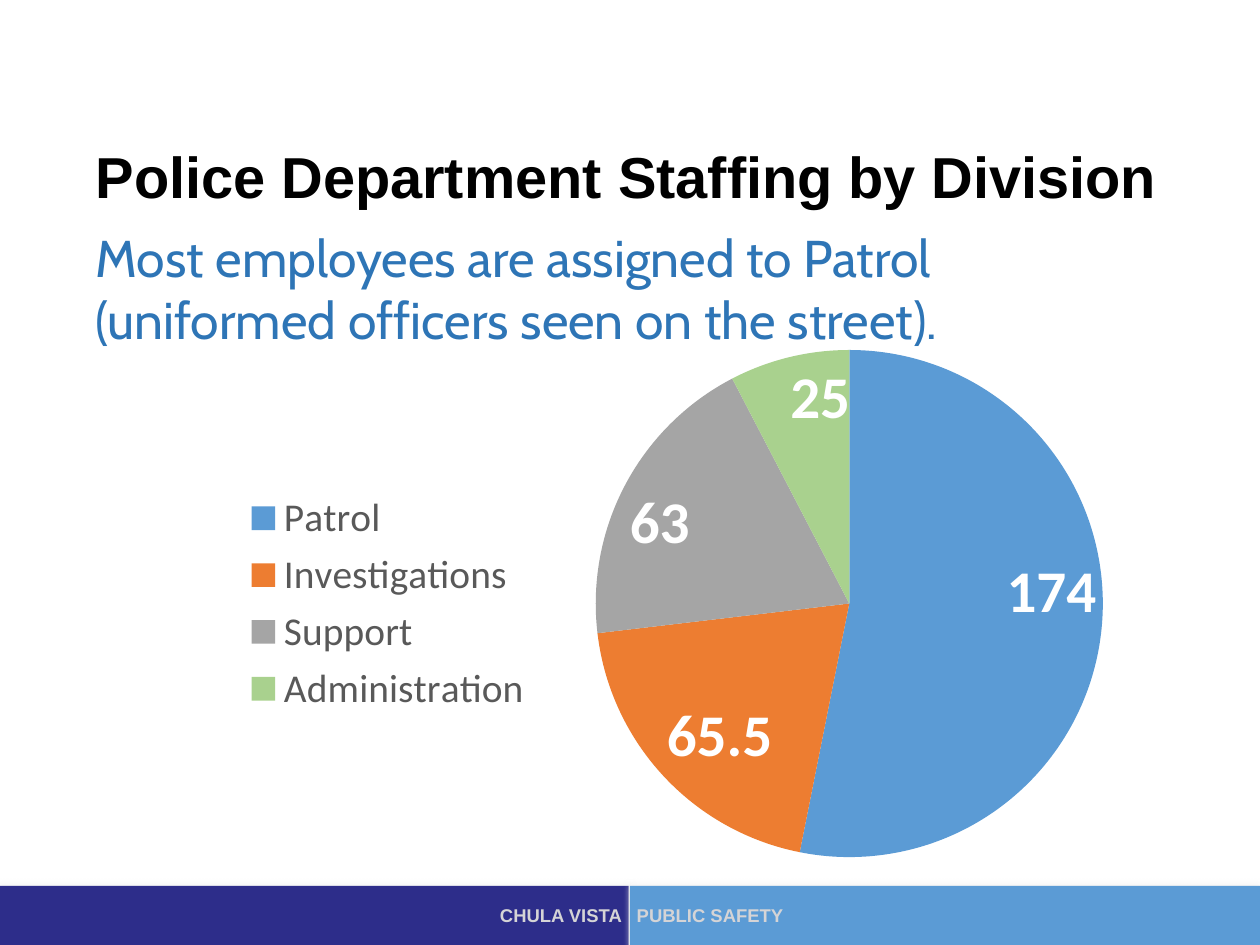
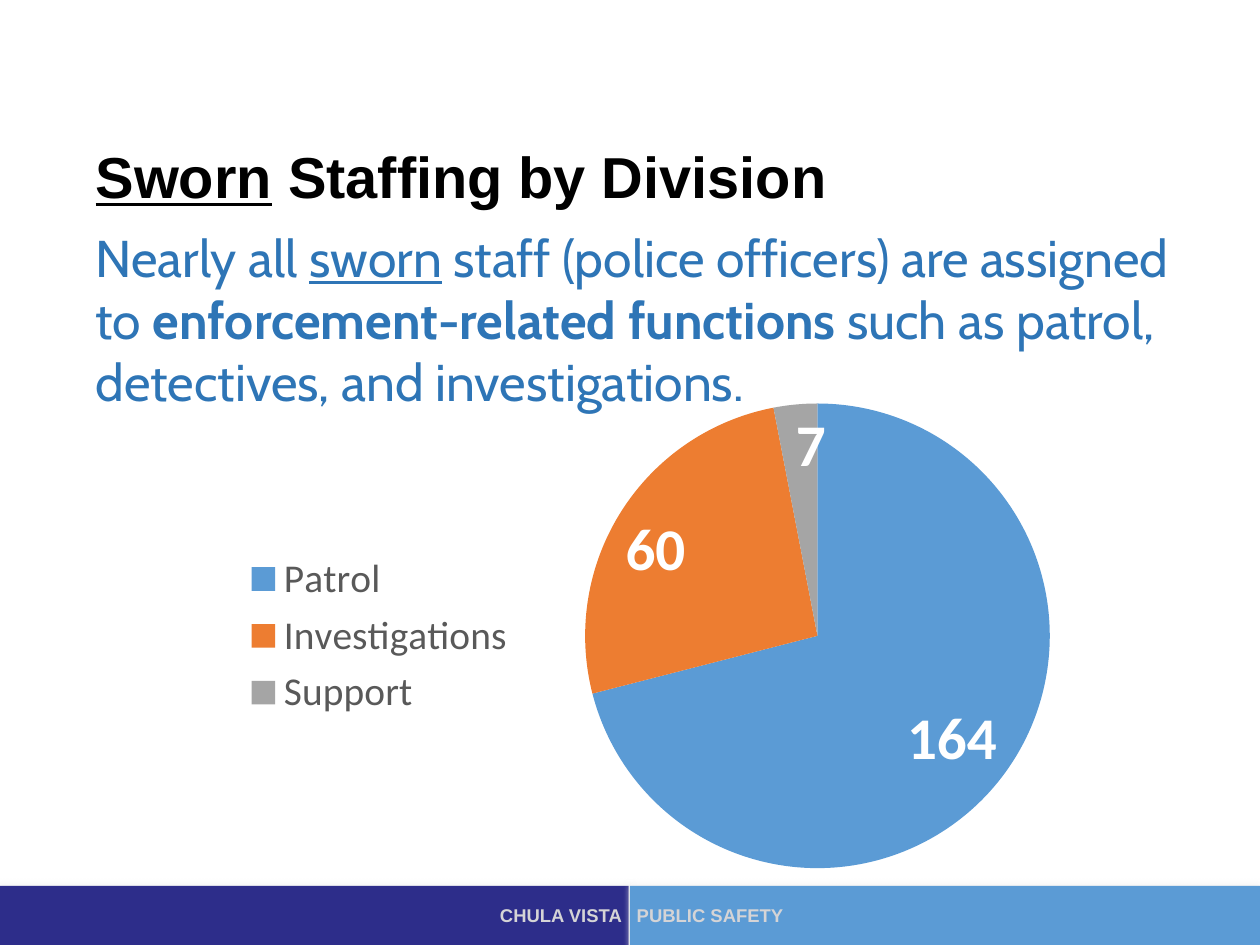
import lxml.etree
import pptx
import pptx.chart.data
import pptx.dml.color
import pptx.enum.chart
import pptx.enum.shapes
import pptx.enum.text
import pptx.oxml.ns
import pptx.util

Pt = pptx.util.Pt
RGB = pptx.dml.color.RGBColor
ALIGN = pptx.enum.text.PP_ALIGN
ANCHOR = pptx.enum.text.MSO_ANCHOR
FIT = pptx.enum.text.MSO_AUTO_SIZE

BLACK = RGB(0, 0, 0)
WHITE = RGB(255, 255, 255)
NAVY = RGB(0x2D, 0x2D, 0x8A)
BLUE = RGB(0x5B, 0x9B, 0xD5)
ORANGE = RGB(0xED, 0x7D, 0x31)
GRAY = RGB(0xA5, 0xA5, 0xA5)
GREEN = RGB(0xA9, 0xD1, 0x8E)
INK = RGB(0x2E, 0x75, 0xB6)
SLATE = RGB(0x59, 0x59, 0x59)
SILVER = RGB(0xD5, 0xD4, 0xD6)
GLOW = RGB(0xE7, 0xE6, 0xE6)

WIDE, HIGH = 1024, 768
LEFT = 70.5
SLICES = (BLUE, ORANGE, GRAY, GREEN)


def style(font, name, size, color, bold=False):
    font.name, font.size, font.bold = name, Pt(size), bold
    font.color.rgb = color


def place(shape, *box):
    shape.left, shape.top, shape.width, shape.height = map(Pt, box)


def fill_text(para, parts):
    for text, mark in parts:
        run = para.add_run()
        run.text = text
        if mark:
            setattr(run.font, mark, True)


def add_glow(shape):
    qn = pptx.oxml.ns.qn
    shape.shadow.inherit = False
    effects = shape.element.spPr.find(qn("a:effectLst"))
    glow = lxml.etree.SubElement(effects, qn("a:outerShdw"),
                                 blurRad=str(Pt(6)), dist="0", dir="0")
    color = lxml.etree.SubElement(glow, qn("a:srgbClr"), val=str(GLOW))
    lxml.etree.SubElement(color, qn("a:alpha"), val="80000")


def add_band(slide, left, width, fill, text, align):
    rect = pptx.enum.shapes.MSO_SHAPE.RECTANGLE
    band = slide.shapes.add_shape(rect, Pt(left), Pt(720), Pt(width), Pt(49.5))
    band.fill.solid()
    band.fill.fore_color.rgb = fill
    band.line.fill.background()
    add_glow(band)
    frame = band.text_frame
    frame.margin_left = frame.margin_right = Pt(5.5)
    frame.vertical_anchor = ANCHOR.MIDDLE
    para = frame.paragraphs[0]
    para.text, para.alignment, para.line_spacing = text, align, 0.9
    style(para.font, "Arial", 15, SILVER, True)


def add_title(slide, parts):
    title = slide.shapes.title
    place(title, LEFT, 103.5, 883.5, 85.5)
    frame = title.text_frame
    frame.auto_size = FIT.NONE
    frame.vertical_anchor = ANCHOR.MIDDLE
    para = frame.paragraphs[0]
    para.alignment, para.line_spacing = ALIGN.LEFT, 0.9
    style(para.font, "Arial", 46.9, BLACK, True)
    fill_text(para, parts)


def add_lead(slide, height, parts):
    box = slide.shapes.add_textbox(Pt(LEFT), Pt(180), Pt(898), Pt(height))
    frame = box.text_frame
    frame.word_wrap = True
    frame.auto_size = FIT.SHAPE_TO_FIT_TEXT
    para = frame.paragraphs[0]
    style(para.font, "Cabin", 42, INK)
    fill_text(para, parts)


def add_pie(slide, box, staff):
    kinds = pptx.enum.chart
    data = pptx.chart.data.CategoryChartData()
    data.categories = list(staff)
    data.add_series("Series 1", list(staff.values()))
    chart = slide.shapes.add_chart(
        kinds.XL_CHART_TYPE.PIE, *map(Pt, box), data).chart
    style(chart.font, "Calibri", 10, BLACK)
    chart.has_title = False
    chart.has_legend = True
    legend = chart.legend
    legend.position = kinds.XL_LEGEND_POSITION.LEFT
    legend.include_in_layout = False
    style(legend.font, "Calibri", 32, SLATE)
    plot = chart.plots[0]
    plot.vary_by_categories = True
    series = plot.series[0]
    for i, color in enumerate(SLICES[:len(staff)]):
        slice_ = series.points[i].format
        slice_.fill.solid()
        slice_.fill.fore_color.rgb = color
        slice_.line.fill.background()
    labels = series.data_labels
    labels.show_value = True
    labels.position = kinds.XL_LABEL_POSITION.INSIDE_END
    style(labels.font, "Calibri", 48, WHITE, True)


def add_slide(deck, title, pie, staff, height, lead):
    slide = deck.slides.add_slide(deck.slide_layouts[5])
    add_band(slide, -1.5, 512.5, NAVY, "CHULA VISTA", ALIGN.RIGHT)
    add_band(slide, 512, 512, BLUE, "PUBLIC SAFETY", ALIGN.LEFT)
    add_title(slide, title)
    add_pie(slide, pie, staff)
    add_lead(slide, height, lead)


def main():
    deck = pptx.Presentation()
    deck.slide_width, deck.slide_height = Pt(WIDE), Pt(HIGH)
    add_slide(
        deck,
        [("Police Department Staffing by Division", None)],
        (188, 274.5, 756, 432),
        {"Patrol": 174, "Investigations": 65.5, "Support": 63,
         "Administration": 25},
        109,
        [("Most employees are assigned to Patrol "
          "(uniformed officers seen on the street).", None)])
    add_slide(
        deck,
        [("Sworn", "underline"), (" Staffing by Division", None)],
        (188, 318, 718, 397.5),
        {"Patrol": 164, "Investigations": 60, "Support": 7},
        160,
        [("Nearly all ", None), ("sworn", "underline"),
         (" staff (police officers) are assigned to ", None),
         ("enforcement-related functions", "bold"),
         (" such as patrol, detectives, and investigations.", None)])
    deck.save("out.pptx")


if __name__ == "__main__":
    main()
